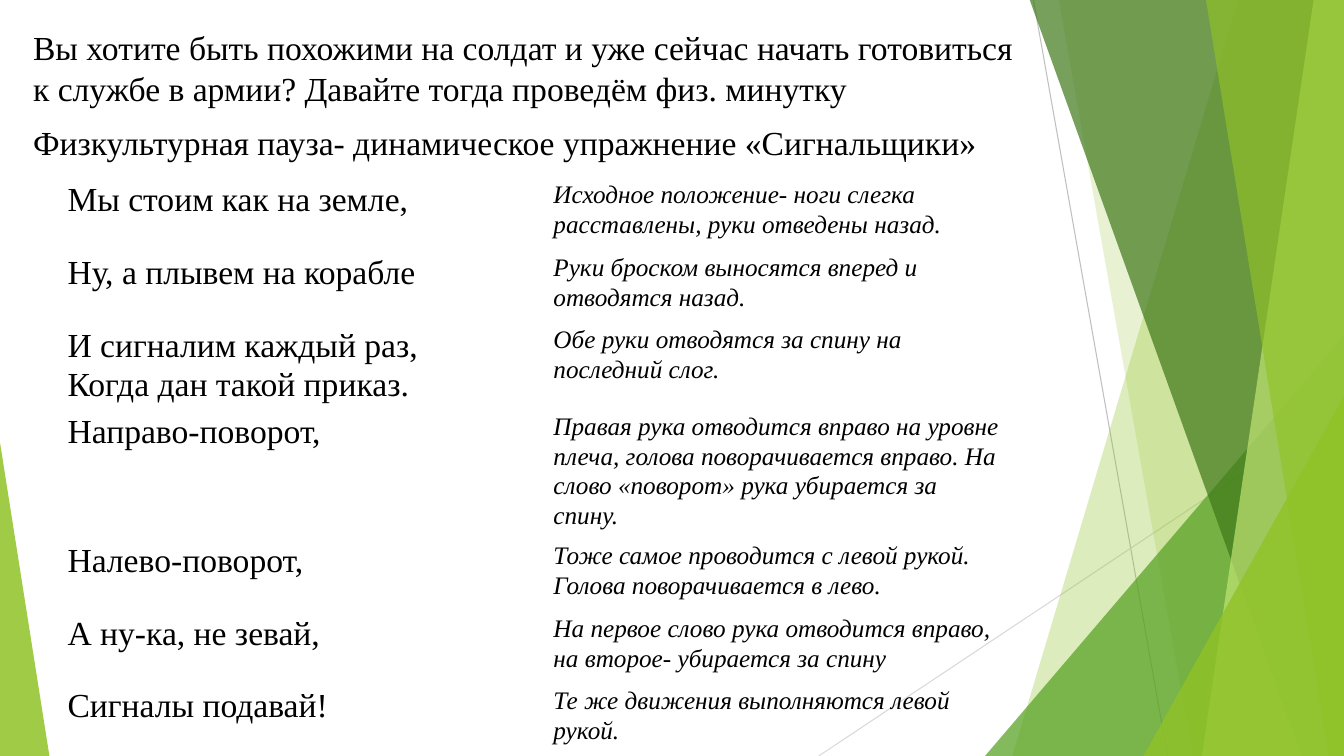
from lxml.etree import SubElement
from pptx import Presentation
from pptx.dml.color import RGBColor
from pptx.enum.shapes import MSO_CONNECTOR, MSO_SHAPE
from pptx.oxml.ns import qn
from pptx.util import Inches, Pt

WIDTH, HEIGHT = 13.33, 7.5
FONT = "Times New Roman"
NO_STYLE = "{2D5ABB26-0587-4C30-8999-92F81FD0307C}"
COLORS = {
    "text": "000000",
    "green": "90C226",
    "leaf": "54A021",
    "forest": "3F7819",
    "lime": "C0E474",
    "grey": "BFBFBF",
    "pale_grey": "D9D9D9",
}
INTRO = [
    "Вы хотите быть похожими на солдат и уже сейчас начать готовиться "
    "к службе в армии? Давайте тогда проведём физ. минутку",
    "Физкультурная пауза- динамическое упражнение «Сигнальщики»",
]
EXERCISES = [
    (0.72, ["Мы стоим как на земле,"],
     "Исходное положение- ноги слегка расставлены, руки отведены назад."),
    (0.72, ["Ну, а плывем на корабле"],
     "Руки броском выносятся вперед и отводятся назад."),
    (0.84, ["И сигналим каждый раз,", "Когда дан такой приказ."],
     "Обе руки отводятся за спину на последний слог."),
    (1.08, ["Направо-поворот,"],
     "Правая рука отводится вправо на уровне плеча, голова поворачивается вправо. "
     "На слово «поворот» рука убирается за спину."),
    (0.72, ["Налево-поворот,"],
     "Тоже самое проводится с левой рукой. Голова поворачивается в лево."),
    (0.72, ["А ну-ка, не зевай,"],
     "На первое слово рука отводится вправо, на второе- убирается за спину"),
    (0.72, ["Сигналы подавай!"],
     "Те же движения выполняются левой рукой."),
]


def rgb(name):
    """Return the named colour."""
    return RGBColor.from_string(COLORS[name])


def write_text(tf, lines, size=24, italic=False, before=0, spacing=None):
    """Write one paragraph per line into a text frame."""
    tf.word_wrap = True
    for i, line in enumerate(lines):
        p = tf.paragraphs[0] if i == 0 else tf.add_paragraph()
        p.space_before = Pt(before)
        p.line_spacing = spacing
        r = p.add_run()
        r.text = line
        r.font.name = FONT
        r.font.size = Pt(size)
        r.font.italic = italic
        r.font.color.rgb = rgb("text")


def paint(sp, color, opacity):
    """Give a shape a translucent fill without line or shadow."""
    sp.shadow.inherit = False
    sp.line.fill.background()
    sp.fill.solid()
    sp.fill.fore_color.rgb = rgb(color)
    fill = sp.fill._xPr.find(qn("a:solidFill"))
    SubElement(fill[0], qn("a:alpha")).set("val", str(opacity * 1000))


def add_line(s, start, end, color):
    """Draw a thin straight line."""
    line = s.shapes.add_connector(
        MSO_CONNECTOR.STRAIGHT, *(Inches(v) for v in start + end))
    line.line.color.rgb = rgb(color)
    line.line.width = Pt(0.75)
    SubElement(line._element.spPr, qn("a:effectLst"))


def add_band(s, top_x, bottom_x, color, opacity):
    """Draw a slanted band that reaches the right edge of the slide."""
    top = -0.01
    corners = [(WIDTH, top), (WIDTH, HEIGHT), (bottom_x, HEIGHT)]
    builder = s.shapes.build_freeform(Inches(top_x), Inches(top))
    builder.add_line_segments([(Inches(x), Inches(y)) for x, y in corners])
    paint(builder.convert_to_shape(), color, opacity)


def add_triangle(s, left, top, width, apex, color, opacity):
    """Draw a triangle that stands on the bottom edge of the slide."""
    sp = s.shapes.add_shape(
        MSO_SHAPE.ISOSCELES_TRIANGLE, Inches(left), Inches(top),
        Inches(width), Inches(HEIGHT - top))
    sp.adjustments[0] = apex
    paint(sp, color, opacity)


def add_decor(s):
    """Draw the green facets from back to front."""
    add_line(s, (10.25, 0), (11.58, HEIGHT), "grey")
    add_line(s, (WIDTH, 4.03), (8.12, HEIGHT), "pale_grey")
    add_band(s, 12.28, 10.04, "green", 30)
    add_band(s, 10.5, 11.83, "green", 20)
    add_triangle(s, 9.77, 3.33, 3.56, 1, "leaf", 72)
    add_band(s, 10.21, 12.91, "forest", 70)
    add_band(s, 13.03, 11.92, "lime", 70)
    add_band(s, 11.96, 13.18, "green", 65)
    add_triangle(s, 11.34, 3.93, 1.99, 1, "green", 80)
    add_triangle(s, 0, 4.39, 0.49, 0, "green", 85)


def add_exercises(s):
    """Add the table of verses and movements."""
    widths = (4.82, 4.62)
    height = sum(row[0] for row in EXERCISES)
    table = s.shapes.add_table(
        len(EXERCISES), len(widths), Inches(0.6), Inches(1.78),
        Inches(sum(widths)), Inches(height)).table
    table.first_row = table.horz_banding = False
    table._tbl.tblPr.find(qn("a:tableStyleId")).text = NO_STYLE
    for column, width in zip(table.columns, widths):
        column.width = Inches(width)
    for row, (row_height, verse, movement) in zip(table.rows, EXERCISES):
        row.height = Inches(row_height)
        for cell in row.cells:
            cell.fill.background()
            cell.margin_left = cell.margin_right = Inches(0.07)
            cell.margin_top = cell.margin_bottom = 0
        write_text(row.cells[0].text_frame, verse, spacing=1.07)
        write_text(row.cells[1].text_frame, [movement], size=18, italic=True,
                   spacing=1.07)


def main():
    """Build and save the slide."""
    prs = Presentation()
    prs.slide_width, prs.slide_height = Inches(WIDTH), Inches(HEIGHT)
    s = prs.slides.add_slide(prs.slide_layouts[6])
    add_decor(s)
    intro = s.shapes.add_textbox(
        Inches(0.23), Inches(0.22), Inches(10.02), Inches(5.05))
    write_text(intro.text_frame, INTRO, before=10)
    add_exercises(s)
    prs.save("out.pptx")


if __name__ == "__main__":
    main()
